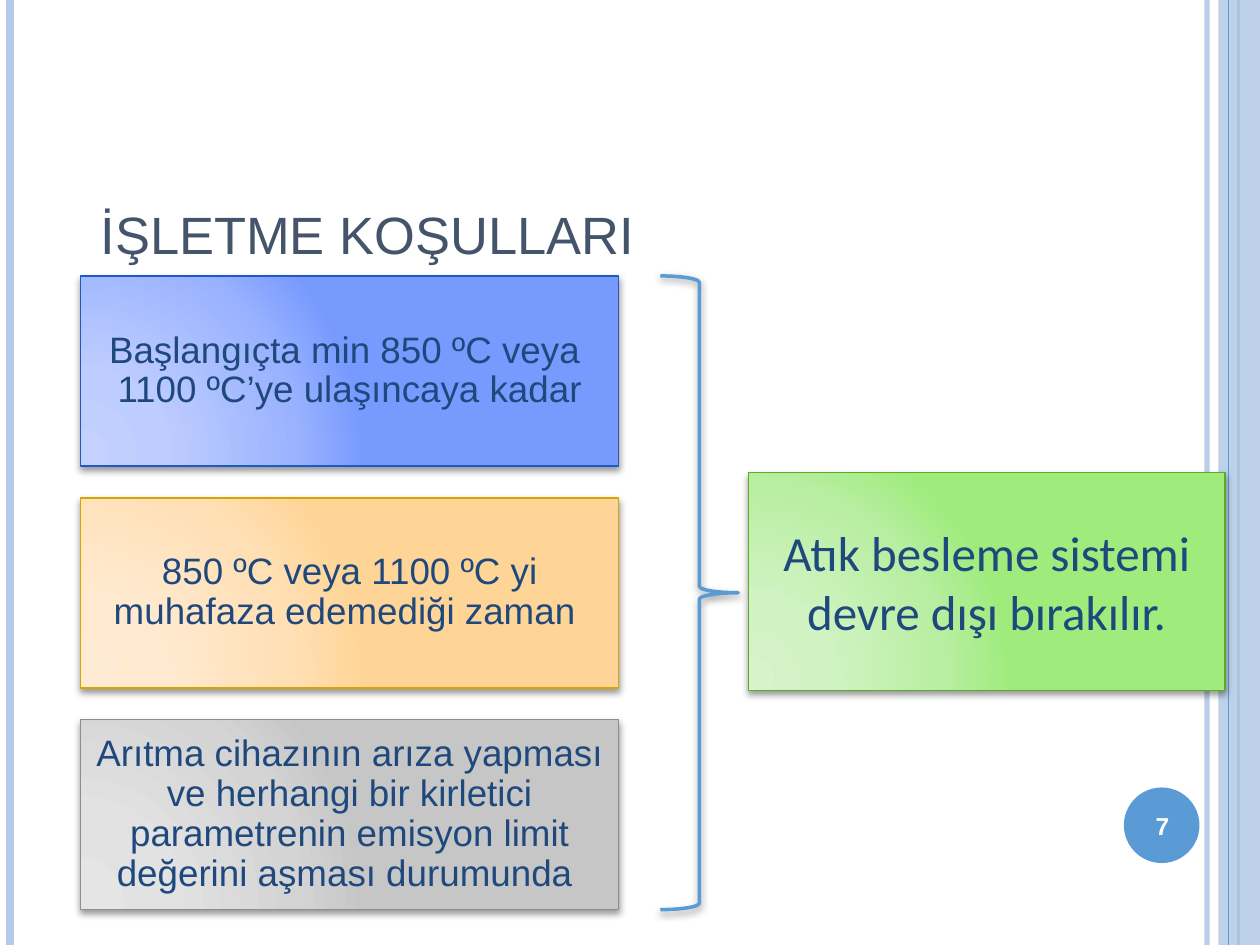
from lxml import etree
from pptx import Presentation
from pptx.dml.color import RGBColor
from pptx.enum.shapes import MSO_CONNECTOR, MSO_SHAPE
from pptx.enum.text import MSO_ANCHOR, PP_ALIGN
from pptx.oxml import parse_xml
from pptx.oxml.ns import qn
from pptx.util import Inches, Pt

STRAIGHT = MSO_CONNECTOR.STRAIGHT
RECTANGLE, OVAL, RIGHT_BRACE = MSO_SHAPE.RECTANGLE, MSO_SHAPE.OVAL, MSO_SHAPE.RIGHT_BRACE
MIDDLE, BOTTOM = MSO_ANCHOR.MIDDLE, MSO_ANCHOR.BOTTOM
LEFT, CENTER = PP_ALIGN.LEFT, PP_ALIGN.CENTER

PALE_BLUE = RGBColor(0xB5, 0xCB, 0xE7)
BLUE = RGBColor(0x5B, 0x9B, 0xD5)
SLATE = RGBColor(0x44, 0x54, 0x6A)
NAVY = RGBColor(0x1F, 0x49, 0x7D)
WHITE = RGBColor(0xFF, 0xFF, 0xFF)
BLUE_EDGE = RGBColor(0x1F, 0x5A, 0xC3)
ORANGE_EDGE = RGBColor(0xDA, 0xA4, 0x00)
GRAY_EDGE = RGBColor(0x8D, 0x8D, 0x8D)
GREEN_EDGE = RGBColor(0x5C, 0xAA, 0x27)


def gradient_colors(*values):
    return [RGBColor.from_string(value) for value in values]


BLUE_SHADES = gradient_colors("C4D1FF", "BECDFF", "9BB3FF", "779AFF")
ORANGE_SHADES = gradient_colors("FFEBD3", "FFEACF", "FFDFB4", "FFD597")
GRAY_SHADES = gradient_colors("E5E5E5", "E2E2E2", "D4D4D4", "C6C6C6")
GREEN_SHADES = gradient_colors("D5F4C9", "D1F3C3", "B8EEA2", "9FEC7D")
GRADIENT_STOPS = (0, 30, 75, 100)

NAMESPACE = 'xmlns:a="http://schemas.openxmlformats.org/drawingml/2006/main"'
CONDITIONS = [
    ("Başlangıçta min 850 ºC veya \v1100 ºC’ye ulaşıncaya kadar", BLUE_SHADES, BLUE_EDGE),
    ("850 ºC veya 1100 ºC yi muhafaza edemediği zaman ", ORANGE_SHADES, ORANGE_EDGE),
    ("Arıtma cihazının arıza yapması ve herhangi bir kirletici parametrenin "
     "emisyon limit değerini aşması durumunda ", GRAY_SHADES, GRAY_EDGE),
]


def set_opacity(shape, percent):
    for color in shape._element.spPr.iter(qn("a:srgbClr")):
        etree.SubElement(color, qn("a:alpha"), val=str(percent * 1000))


def add_shadow(shape):
    shape.shadow.inherit = False
    effects = shape._element.spPr.find(qn("a:effectLst"))
    effects.append(parse_xml(
        f'<a:outerShdw {NAMESPACE} blurRad="{Pt(4)}" dist="{Pt(2)}" dir="5400000" rotWithShape="0">'
        '<a:srgbClr val="000000"><a:alpha val="40000"/></a:srgbClr></a:outerShdw>'))


def set_corner_gradient(shape, shades):
    stops = "".join(
        f'<a:gs pos="{position * 1000}"><a:srgbClr val="{shade}"/></a:gs>'
        for position, shade in zip(GRADIENT_STOPS, shades))
    gradient = parse_xml(
        f'<a:gradFill {NAMESPACE} rotWithShape="1"><a:gsLst>{stops}</a:gsLst>'
        '<a:path path="circle"><a:fillToRect l="5000" t="100000" r="120000" b="10000"/>'
        '</a:path></a:gradFill>')
    shape._element.spPr.find(qn("a:prstGeom")).addnext(gradient)


def write_text(shape, text, *, size, color, font="Arial", bold=False, align=CENTER,
               anchor=MIDDLE, spacing=1.0, inset=0.1):
    frame = shape.text_frame
    frame.word_wrap = True
    frame.vertical_anchor = anchor
    frame.margin_left = frame.margin_right = Inches(inset)
    frame.margin_top = frame.margin_bottom = Inches(0.05)
    paragraph = frame.paragraphs[0]
    paragraph.text = text
    paragraph.alignment = align
    paragraph.line_spacing = spacing
    for run in paragraph.runs:
        run.font.name = font
        run.font.size = Pt(size)
        run.font.bold = bold
        run.font.color.rgb = color


def add_text(slide, box, text, **text_format):
    write_text(slide.shapes.add_textbox(*map(Inches, box)), text, **text_format)


def add_plain_shape(slide, kind, box, color):
    shape = slide.shapes.add_shape(kind, *map(Inches, box))
    shape.shadow.inherit = False
    shape.fill.solid()
    shape.fill.fore_color.rgb = color
    shape.line.fill.background()
    return shape


def add_stripe(slide, x, height, color, width):
    line = slide.shapes.add_connector(STRAIGHT, Inches(x), 0, Inches(x), Inches(height))
    line.line.color.rgb = color
    line.line.width = Pt(width)
    etree.SubElement(line._element.spPr, qn("a:effectLst"))
    return line


def add_frame(slide, width, height):
    set_opacity(add_stripe(slide, 9.58, height, PALE_BLUE, 3), 93)
    add_stripe(slide, 0.08, height, PALE_BLUE, 4.5)
    add_stripe(slide, 9.83, height, BLUE, 1.5)
    band = add_plain_shape(slide, RECTANGLE, (width - 0.33, 0, 0.33, height), PALE_BLUE)
    set_opacity(band, 87)
    add_stripe(slide, 9.75, height, BLUE, 0.75)


def add_page_number(slide, box, number):
    add_plain_shape(slide, OVAL, box, BLUE)
    left, top, width, height = box
    add_text(slide, (left - 0.03, top + 0.02, width + 0.07, height - 0.03), number,
             size=14, color=WHITE, bold=True)


def add_card(slide, box, text, shades, edge, **text_format):
    card = slide.shapes.add_shape(RECTANGLE, *map(Inches, box))
    set_corner_gradient(card, shades)
    card.line.color.rgb = edge
    card.line.width = Pt(1)
    add_shadow(card)
    write_text(card, text, color=NAVY, **text_format)


def add_conditions(slide, box, gap):
    left, top, width, height = box
    card_height = (height - gap * (len(CONDITIONS) - 1)) / len(CONDITIONS)
    for index, (text, shades, edge) in enumerate(CONDITIONS):
        card_top = top + index * (card_height + gap)
        add_card(slide, (left, card_top, width, card_height), text, shades, edge,
                 size=21, spacing=0.9, inset=0.09)


def add_brace(slide, box):
    brace = slide.shapes.add_shape(RIGHT_BRACE, *map(Inches, box))
    brace.fill.background()
    brace.line.color.rgb = BLUE
    brace.line.width = Pt(2)
    add_shadow(brace)


def main():
    presentation = Presentation()
    presentation.slide_width = Inches(10)
    presentation.slide_height = Inches(7.5)
    slide = presentation.slides.add_slide(presentation.slide_layouts[6])
    add_frame(slide, 10, 7.5)
    add_text(slide, (0.7, 0.7, 8.62, 1.45), "İŞLETME KOŞULLARI",
             size=30, color=SLATE, align=LEFT, anchor=BOTTOM)
    add_conditions(slide, (0.64, 2.19, 4.27, 5.03), gap=0.25)
    add_page_number(slide, (8.92, 6.25, 0.6, 0.6), "7")
    add_brace(slide, (5.24, 2.19, 0.62, 5.03))
    add_card(slide, (5.94, 3.75, 3.78, 1.73), "Atık besleme sistemi devre dışı bırakılır.",
             GREEN_SHADES, GREEN_EDGE, size=28, font="Calibri")
    presentation.save("out.pptx")


if __name__ == "__main__":
    main()
